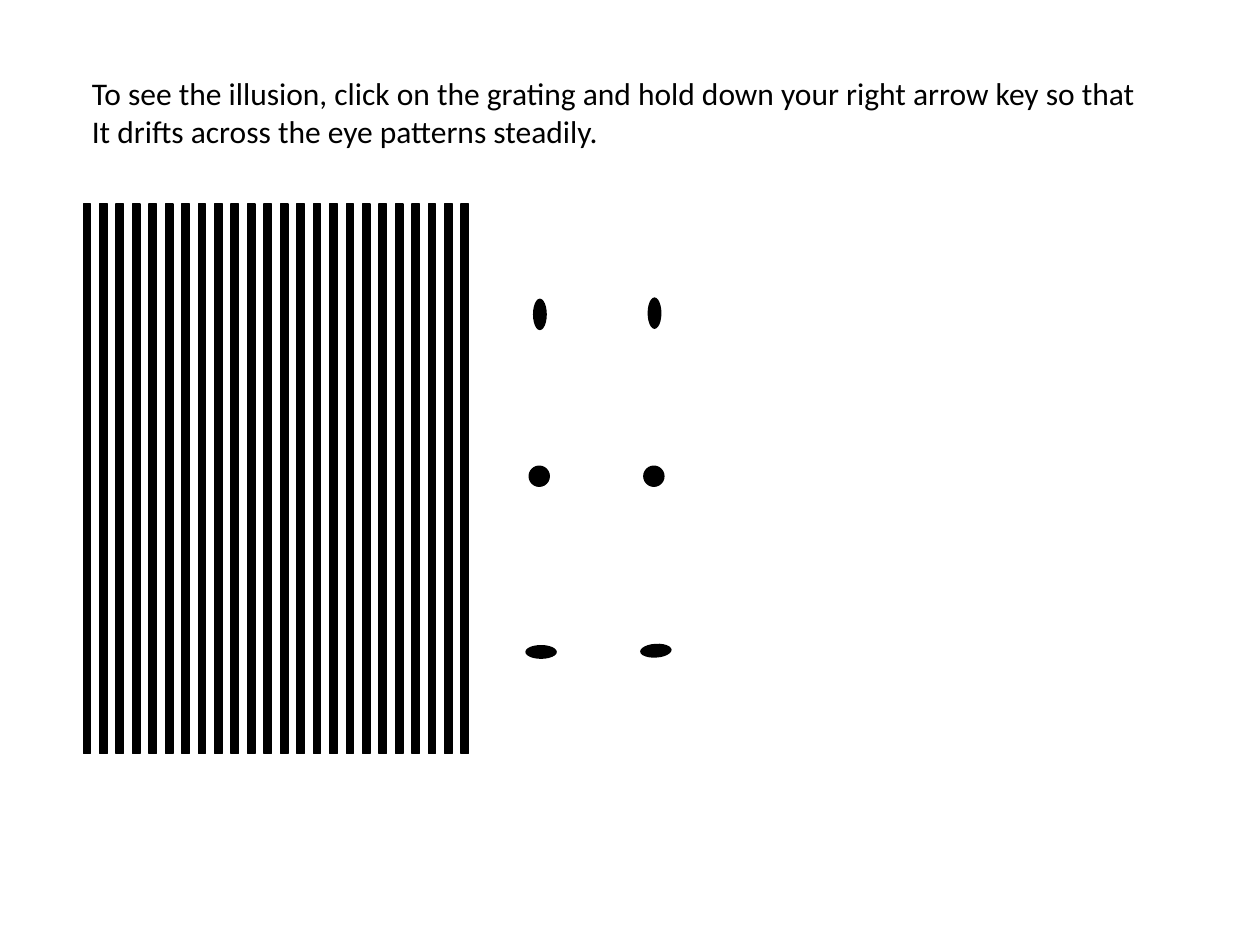
import pptx
import pptx.util
import pptx.dml.color
import pptx.enum.shapes
import pptx.enum.text

Pt = pptx.util.Pt
SHAPE = pptx.enum.shapes.MSO_SHAPE
BLACK = pptx.dml.color.RGBColor(0, 0, 0)

BARS = 24
STEP = 9.39
# left, top, width, height, turn, outlined
EYES = [
    (365, 175, 18, 7.9, 270, False),
    (299.5, 175.7, 18, 7.9, 270, False),
    (365.8, 367.9, 18, 7.9, 356.4, False),
    (300.2, 368.6, 18, 7.9, 0, False),
    (302.4, 266.4, 11.5, 11.5, 0, True),
    (367.9, 266.4, 11.5, 11.5, 0, True),
]
LINES = [
    "To see the illusion, click on the grating and hold down your right arrow key so that",
    "It drifts across the eye patterns steadily.",
]


def add_mark(group, kind, left, top, width, height, turn, lined):
    """Add a solid black shape, turned clockwise by degrees."""
    mark = group.shapes.add_shape(kind, Pt(left), Pt(top), Pt(width), Pt(height))
    mark.rotation = turn
    mark.shadow.inherit = False
    mark.fill.solid()
    mark.fill.fore_color.rgb = BLACK
    if lined:
        mark.line.color.rgb = BLACK
        mark.line.width = Pt(0.75)
    else:
        mark.line.fill.background()


deck = pptx.Presentation()
deck.slide_width, deck.slide_height = Pt(720), Pt(540)
slide = deck.slides.add_slide(deck.slide_layouts[6])

grating = slide.shapes.add_group_shape()
for i in range(BARS):
    add_mark(grating, SHAPE.RECTANGLE, 108.7 - i * STEP, 271.4, 313.9, 4.3, 90, True)

eyes = slide.shapes.add_group_shape()
for eye in EYES:
    add_mark(eyes, SHAPE.OVAL, *eye)

box = slide.shapes.add_textbox(Pt(45.4), Pt(38.9), Pt(620.6), Pt(51.1))
frame = box.text_frame
frame.word_wrap = False
frame.auto_size = pptx.enum.text.MSO_AUTO_SIZE.SHAPE_TO_FIT_TEXT
frame.text = "\n".join(LINES)
for para in frame.paragraphs:
    para.font.name = "Calibri"
    para.font.size = Pt(18)
    para.font.color.rgb = BLACK

deck.save("out.pptx")
